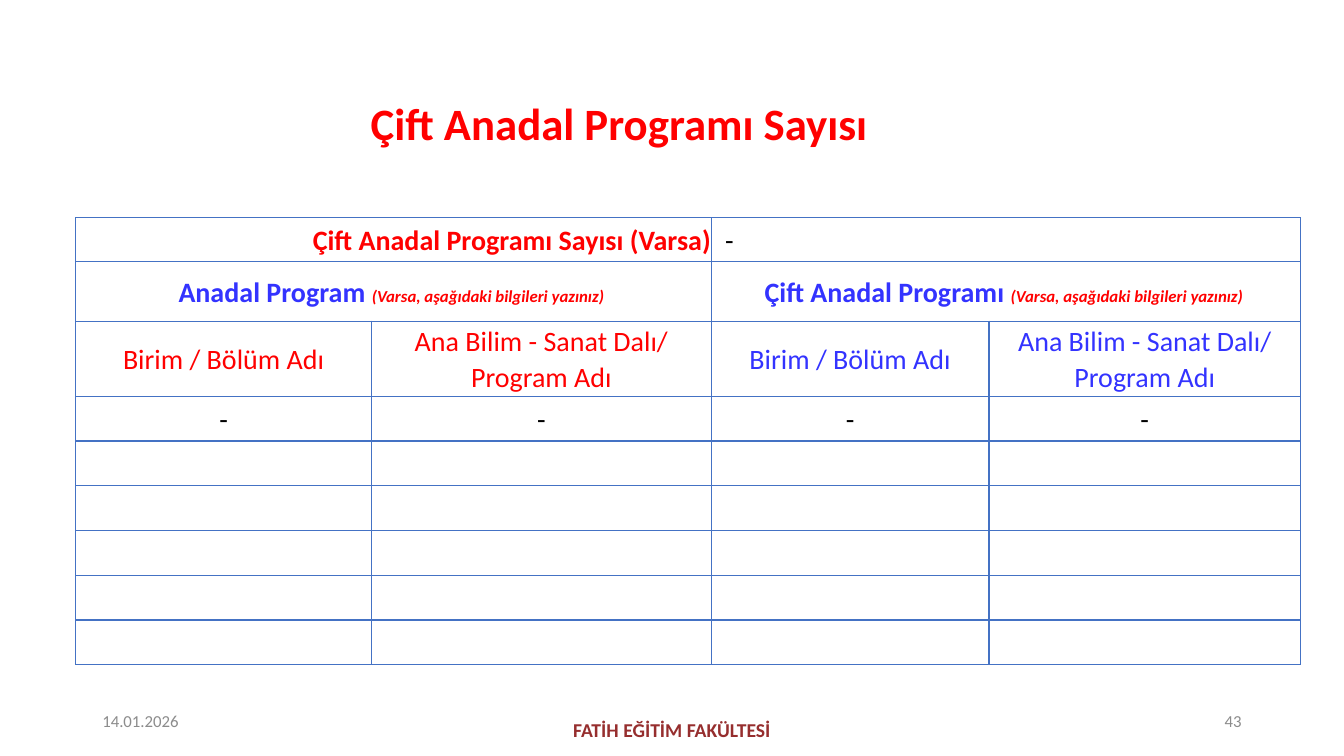
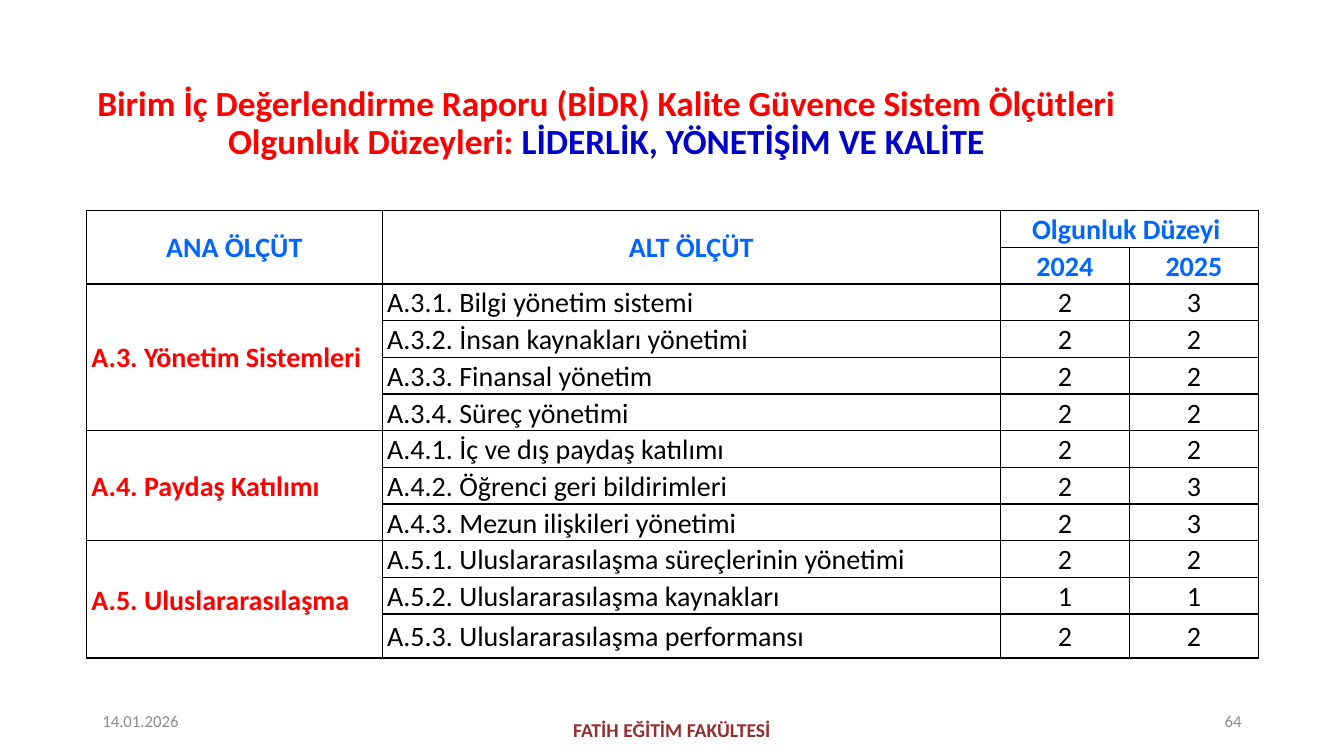
from lxml import etree
from pptx import Presentation
from pptx.dml.color import RGBColor
from pptx.enum.text import MSO_ANCHOR, MSO_AUTO_SIZE, PP_ALIGN
from pptx.oxml.ns import qn
from pptx.util import Pt

LEFT, RIGHT = PP_ALIGN.LEFT, PP_ALIGN.RIGHT
CENTER, JUST = PP_ALIGN.CENTER, PP_ALIGN.JUSTIFY
MIDDLE = MSO_ANCHOR.MIDDLE
NO_FIT = MSO_AUTO_SIZE.NONE

FONT = "Calibri"
RED = RGBColor(0xFF, 0x00, 0x00)
BLACK = RGBColor(0x00, 0x00, 0x00)
GRAY = RGBColor(0x8C, 0x8C, 0x8C)
MAROON = RGBColor(0x96, 0x2E, 0x2E)
VIOLET = RGBColor(0x33, 0x33, 0xFF)
NAVY = RGBColor(0x00, 0x00, 0xCC)
AZURE = RGBColor(0x00, 0x66, 0xFF)
STEEL = RGBColor(0x44, 0x72, 0xC4)

DATE = "14.01.2026"
SCHOOL = "FATİH EĞİTİM FAKÜLTESİ"
HINT = "(Varsa, aşağıdaki bilgileri yazınız) "
UNIT = "Birim / Bölüm Adı"
BRANCH = "Ana Bilim - Sanat Dalı/ Program Adı"
GROUPS = [
    ("A.3. Yönetim Sistemleri", [
        ("A.3.1. Bilgi yönetim sistemi", "2", "3"),
        ("A.3.2. İnsan kaynakları yönetimi", "2", "2"),
        ("A.3.3. Finansal yönetim", "2", "2"),
        ("A.3.4. Süreç yönetimi", "2", "2")]),
    ("A.4. Paydaş Katılımı", [
        ("A.4.1. İç ve dış paydaş katılımı", "2", "2"),
        ("A.4.2. Öğrenci geri bildirimleri", "2", "3"),
        ("A.4.3. Mezun ilişkileri yönetimi", "2", "3")]),
    ("A.5. Uluslararasılaşma", [
        ("A.5.1. Uluslararasılaşma süreçlerinin yönetimi", "2", "2"),
        ("A.5.2. Uluslararasılaşma kaynakları", "1", "1"),
        ("A.5.3. Uluslararasılaşma performansı", "2", "2")]),
]


def write(frame, runs, align, space=1.0):
    """Write styled runs into the first paragraph of a frame."""
    para = frame.paragraphs[0]
    para.alignment = align
    para.line_spacing = space
    for text, size, color, bold, slant in runs:
        run = para.add_run()
        run.text = text
        font = run.font
        font.name, font.size = FONT, Pt(size)
        font.bold, font.italic = bold, slant
        font.color.rgb = color


def style(text, color, size=20, bold=False, slant=False):
    """Return one run with its look."""
    return text, size, color, bold, slant


def label(slide, box, run, align):
    """Add a text box holding one run."""
    shape = slide.shapes.add_textbox(*map(Pt, box))
    frame = shape.text_frame
    frame.word_wrap = True
    frame.vertical_anchor = MIDDLE
    write(frame, [run], align)
    return shape


def brand(deck, slide):
    """Move the school name to the master, so that all slides share it."""
    shape = label(slide, (318, 507, 324, 28.8),
                  style(SCHOOL, MAROON, 14, True), CENTER)
    shape.element.nvSpPr.cNvPr.set("id", "20")
    deck.slide_master.shapes.element.append(shape.element)


def start(deck, box, runs, number):
    """Add a slide with its title, date and number."""
    slide = deck.slides.add_slide(deck.slide_layouts[5])
    title = slide.shapes.title
    title.left, title.top, title.width, title.height = map(Pt, box)
    frame = title.text_frame
    frame.word_wrap = True
    frame.auto_size = NO_FIT
    frame.vertical_anchor = MIDDLE
    write(frame, runs, CENTER, 0.9)
    label(slide, (66, 500.5, 216, 28.8), style(DATE, GRAY, 12), LEFT)
    label(slide, (678, 500.5, 216, 28.8), style(number, GRAY, 12), RIGHT)
    return slide


def border(cell, color):
    """Draw a thin line on each side of a cell."""
    props = cell._tc.get_or_add_tcPr()
    for side in ("a:lnL", "a:lnR", "a:lnT", "a:lnB"):
        line = etree.SubElement(props, qn(side), w=str(Pt(1)))
        fill = etree.SubElement(line, qn("a:solidFill"))
        etree.SubElement(fill, qn("a:srgbClr"), val=str(color))


def grid(slide, spot, cols, rows, color, pad):
    """Add a plain ruled table at a spot."""
    box = (*spot, sum(cols), sum(rows))
    frame = slide.shapes.add_table(len(rows), len(cols), *map(Pt, box))
    table = frame.table
    table.first_row = table.horz_banding = False
    for col, width in zip(table.columns, cols):
        col.width = Pt(width)
    for row, height in zip(table.rows, rows):
        row.height = Pt(height)
    for cell in table.iter_cells():
        border(cell, color)
        cell.fill.background()
        cell.vertical_anchor = MIDDLE
        cell.margin_left = cell.margin_right = Pt(pad)
        cell.margin_top = cell.margin_bottom = 0
    return table


def put(table, row, col, runs, align=CENTER, down=1, across=1):
    """Fill a cell, merged over its span."""
    cell = table.cell(row, col)
    if down * across > 1:
        cell.merge(table.cell(row + down - 1, col + across - 1))
    write(cell.text_frame, runs, align, 1.07)
    return cell


def majors(deck):
    """Build the double major slide."""
    head = style("Çift Anadal Programı Sayısı ", RED, 32, True)
    slide = start(deck, (54, 61.2, 784, 57.6), [head], "43")
    table = grid(slide, (54, 155.5), (211.5, 242.5, 198.5, 222.5),
                 (31.5, 42.5, 53.5) + (32,) * 6, STEEL, 0)
    count = style("Çift Anadal Programı Sayısı (Varsa)", RED, bold=True)
    put(table, 0, 0, [count], RIGHT, across=2)
    value = put(table, 0, 2, [style("-", BLACK)], LEFT, across=2)
    value.margin_left = Pt(10)
    hint = style(HINT, RED, 12, True, True)
    for col, name in ((0, "Anadal Program "), (2, "Çift Anadal Programı ")):
        put(table, 1, col, [style(name, VIOLET, bold=True), hint], across=2)
    for col, name in enumerate((UNIT, BRANCH) * 2):
        put(table, 2, col, [style(name, RED if col < 2 else VIOLET)])
        put(table, 3, col, [style("-", BLACK)])


def levels(deck):
    """Build the maturity level slide."""
    head = [style("Birim İç Değerlendirme Raporu (BİDR) Kalite Güvence "
                  "Sistem Ölçütleri Olgunluk Düzeyleri: ", RED, 25.2, True),
            style("LİDERLİK, YÖNETİŞİM VE KALİTE", NAVY, 25.2, True)]
    slide = start(deck, (26, 61.2, 814.4, 55.4), head, "64")
    table = grid(slide, (61.8, 150.4), (211.2, 441.6, 92.2, 92.2),
                 (26.2,) * 11 + (31.5,), BLACK, 3.5)
    for row, col, name, down, across in (
            (0, 0, "ANA ÖLÇÜT", 2, 1), (0, 1, "ALT ÖLÇÜT", 2, 1),
            (0, 2, "Olgunluk Düzeyi ", 1, 2),
            (1, 2, "2024", 1, 1), (1, 3, "2025", 1, 1)):
        put(table, row, col, [style(name, AZURE, bold=True)],
            CENTER, down, across)
    row = 2
    for name, items in GROUPS:
        put(table, row, 0, [style(name, RED, bold=True)], JUST, len(items))
        for item in items:
            for col, text in enumerate(item, 1):
                put(table, row, col, [style(text, BLACK)],
                    JUST if col == 1 else CENTER)
            row += 1


def main():
    """Build and save the deck."""
    deck = Presentation()
    deck.slide_width, deck.slide_height = Pt(960), Pt(540)
    majors(deck)
    levels(deck)
    brand(deck, deck.slides[0])
    deck.save("out.pptx")


if __name__ == "__main__":
    main()
